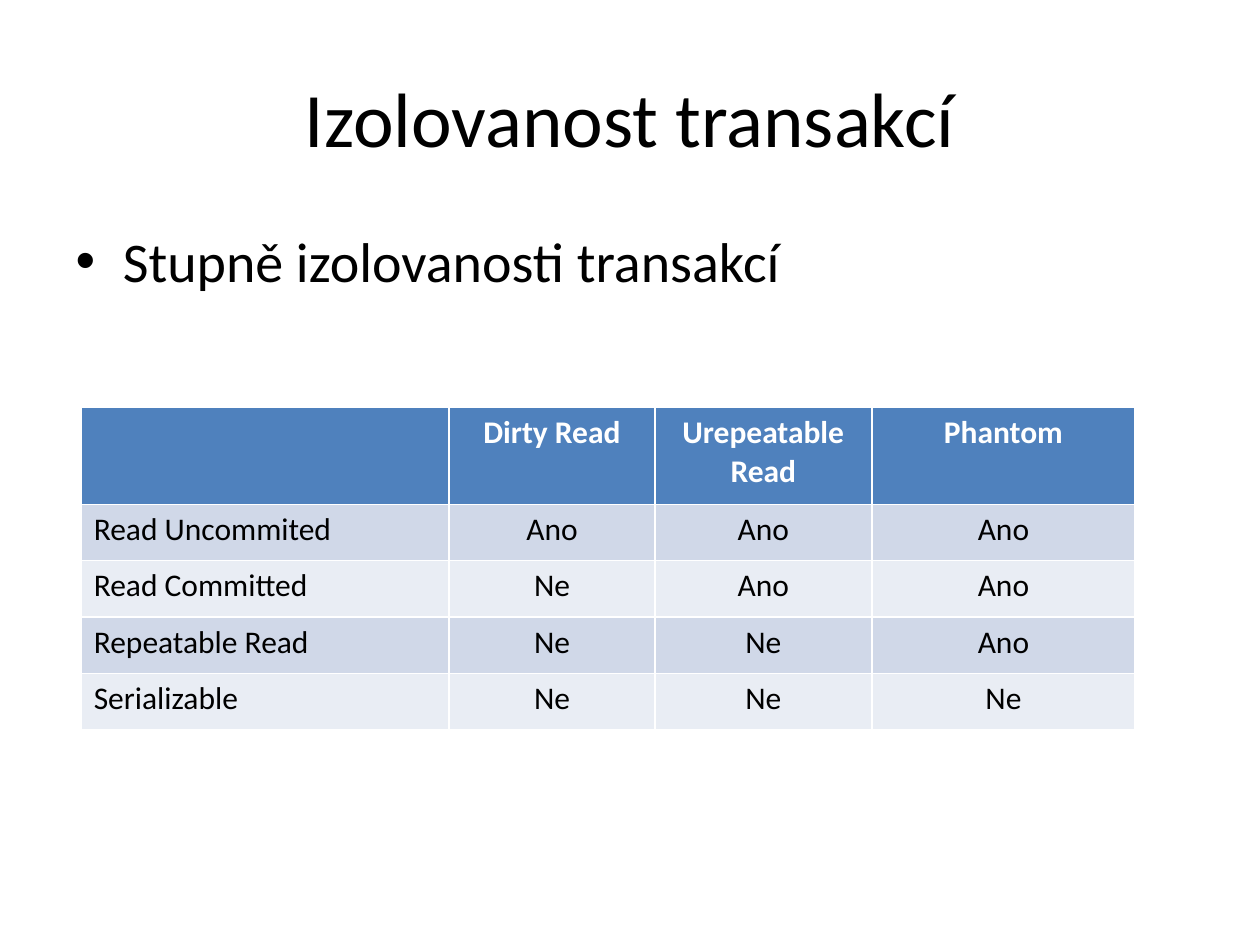
"""Build a slide comparing transaction isolation levels."""
from dataclasses import dataclass

from pptx import Presentation
from pptx.dml.color import RGBColor
from pptx.enum.text import MSO_ANCHOR, PP_ALIGN
from pptx.util import Pt


@dataclass(frozen=True)
class Theme:
    font: str = "Calibri"
    text: str = "000000"
    header_text: str = "FFFFFF"
    header_fill: str = "4F81BD"
    bands: tuple = ("D0D8E8", "E9EDF4")
    title_size: int = 44
    body_size: int = 32
    table_size: int = 18


theme = Theme()


def style(paragraph, size, color, align, bold=False):
    paragraph.alignment = align
    font = paragraph.font
    font.name = theme.font
    font.size = Pt(size)
    font.bold = bold
    font.color.rgb = RGBColor.from_string(color)


def place(part, left, top, width, height):
    part.left, part.top = Pt(left), Pt(top)
    part.width, part.height = Pt(width), Pt(height)


presentation = Presentation()
presentation.slide_width, presentation.slide_height = Pt(720), Pt(540)
slide = presentation.slides.add_slide(presentation.slide_layouts[1])

title = slide.shapes.title
place(title, 36, 21.6, 648, 90)
title.text_frame.text = "Izolovanost transakcí"
title.text_frame.vertical_anchor = MSO_ANCHOR.MIDDLE
style(title.text_frame.paragraphs[0], theme.title_size, theme.text, PP_ALIGN.CENTER)

topic = slide.placeholders[1]
place(topic, 36, 126, 648, 58.3)
topic.text_frame.text = "Stupně izolovanosti transakcí"
style(topic.text_frame.paragraphs[0], theme.body_size, theme.text, PP_ALIGN.LEFT)

isolation_levels = [
    ("", "Dirty Read", "Urepeatable Read", "Phantom"),
    ("Read Uncommited", "Ano", "Ano", "Ano"),
    ("Read Committed", "Ne", "Ano", "Ano"),
    ("Repeatable Read", "Ne", "Ne", "Ano"),
    ("Serializable", "Ne", "Ne", "Ne"),
]
column_widths = (210.3, 117.5, 124, 150.5)
header_height, level_height = 55.4, 32.2
table_height = header_height + level_height * (len(isolation_levels) - 1)

comparison = slide.shapes.add_table(
    len(isolation_levels), len(column_widths),
    Pt(46.4), Pt(232.8), Pt(sum(column_widths)), Pt(table_height),
).table
for column, width in zip(comparison.columns, column_widths):
    column.width = Pt(width)

for row_index, entries in enumerate(isolation_levels):
    is_header = row_index == 0
    comparison.rows[row_index].height = Pt(header_height if is_header else level_height)
    fill = theme.header_fill if is_header else theme.bands[(row_index - 1) % 2]
    color = theme.header_text if is_header else theme.text
    for column_index, entry in enumerate(entries):
        cell = comparison.cell(row_index, column_index)
        cell.text = entry
        cell.fill.solid()
        cell.fill.fore_color.rgb = RGBColor.from_string(fill)
        align = PP_ALIGN.CENTER if column_index else PP_ALIGN.LEFT
        style(cell.text_frame.paragraphs[0], theme.table_size, color, align, is_header)

presentation.save("out.pptx")
